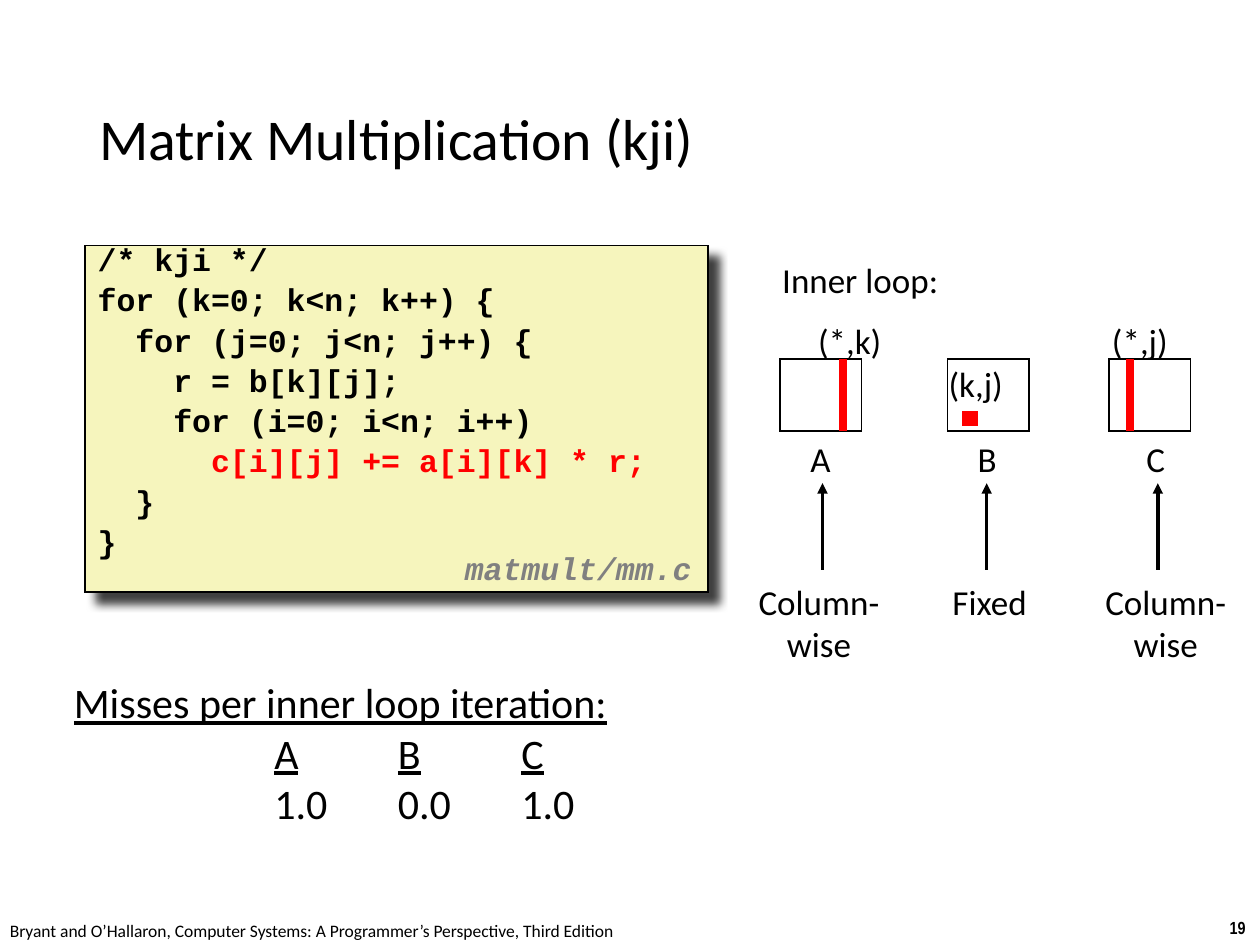
from dataclasses import dataclass

from lxml import etree
from pptx import Presentation
from pptx import util as u
from pptx.dml.color import RGBColor
from pptx.enum import shapes, text
from pptx.oxml.ns import qn


@dataclass(frozen=True)
class Theme:
    ink: str = "000000"
    paper: str = "FFFFFF"
    code_fill: str = "F6F5BD"
    accent: str = "FF0000"
    muted: str = "808080"
    body: str = "Calibri"
    mono: str = "Courier New"
    narrow: str = "Arial Narrow"
    title_size: int = 33
    misses_size: int = 24
    label_size: int = 20
    code_size: int = 18
    footer_size: int = 10


@dataclass(frozen=True)
class Matrix:
    name: str
    index: str
    access: str
    misses: str
    left: float
    name_dx: float
    index_dx: float
    index_dy: float
    mark_dx: float
    arrow_dx: float
    access_dx: float


THEME = Theme()
MATRICES = [
    Matrix("A", "(*,k)", "Column-\nwise", "1.0", 0, 0.82, 1.41, -0.92, 1.27, 0.86, 0.79),
    Matrix("B", "(k,j)", "Fixed", "0.0", 3.38, 0.8, 0.57, -0.05, 0.38, 0.79, 0.85),
    Matrix("C", "(*,j)", "Column-\nwise", "1.0", 6.63, 0.95, 0.63, -0.92, 0.43, 0.99, 1.15),
]
CODE = [
    "/* kji */",
    "for (k=0; k<n; k++) {",
    "  for (j=0; j<n; j++) {",
    "    r = b[k][j];",
    "    for (i=0; i<n; i++)",
    "      c[i][j] += a[i][k] * r;",
    "  }",
    "}",
]
HOT_LINE = 5


def color(value):
    return RGBColor.from_string(value)


def child(parent, tag, **attributes):
    return etree.SubElement(parent, qn(tag), attributes)


def write(frame, content, size=THEME.label_size, font=THEME.body, ink=THEME.ink,
          bold=False, italic=False, underline=False, align=text.PP_ALIGN.LEFT,
          spacing=None, before=None, anchor=text.MSO_ANCHOR.TOP, wrap=False):
    frame.word_wrap = wrap
    frame.vertical_anchor = anchor
    for number, line in enumerate(content.split("\n")):
        paragraph = frame.add_paragraph() if number else frame.paragraphs[0]
        paragraph.alignment = align
        paragraph.line_spacing = spacing
        paragraph.space_before = before
        for part in line.replace("\t", "\n\t\n").split("\n"):
            if not part:
                continue
            run = paragraph.add_run()
            run.text = part
            run.font.size = u.Pt(size)
            run.font.name = font
            run.font.bold = bold
            run.font.italic = italic
            run.font.underline = underline and part != "\t"
            run.font.color.rgb = color(ink)
    return frame.paragraphs


def add_text(slide, left, top, width, height, content, **style):
    box = slide.shapes.add_textbox(u.Cm(left), u.Cm(top), u.Cm(width), u.Cm(height))
    return write(box.text_frame, content, **style)


def add_box(slide, left, top, width, height, fill, line, weight):
    box = slide.shapes.add_shape(shapes.MSO_SHAPE.RECTANGLE, u.Cm(left), u.Cm(top),
                                 u.Cm(width), u.Cm(height))
    box.shadow.inherit = False
    box.fill.solid()
    box.fill.fore_color.rgb = color(fill)
    box.line.color.rgb = color(line)
    box.line.width = u.Pt(weight)
    child(box._element.spPr.find(qn("a:ln")), "a:miter", lim="800000")
    return box


def add_line(slide, x, bottom, top, ink, weight, arrow=False):
    line = slide.shapes.add_connector(shapes.MSO_CONNECTOR.STRAIGHT, u.Cm(x), u.Cm(bottom),
                                      u.Cm(x), u.Cm(top))
    line.line.color.rgb = color(ink)
    line.line.width = u.Pt(weight)
    properties = line._element.spPr
    if arrow:
        child(properties.find(qn("a:ln")), "a:tailEnd", type="triangle")
    child(properties, "a:effectLst")


def add_shadow(box):
    effects = box._element.spPr.find(qn("a:effectLst"))
    shadow = child(effects, "a:outerShdw", blurRad=str(u.Pt(5)), dist=str(u.Pt(8.5)),
                   dir="2700000", algn="tl", rotWithShape="0")
    child(child(shadow, "a:srgbClr", val=THEME.ink), "a:alpha", val="75000")


def code_panel(slide, left, top, width, height):
    panel = add_box(slide, left, top, width, height, THEME.code_fill, THEME.ink, 1)
    add_shadow(panel)
    lines = write(panel.text_frame, "\n".join(CODE), size=THEME.code_size, font=THEME.mono,
                  bold=True, spacing=0.65, before=u.Pt(9), wrap=True)
    lines[HOT_LINE].runs[0].font.color.rgb = color(THEME.accent)
    add_text(slide, left + width - 5.15, top + height - 0.94, 5.28, 0.99, "matmult/mm.c",
             size=THEME.code_size, font=THEME.mono, ink=THEME.muted, bold=True, italic=True,
             spacing=0.94)


def matrix_diagram(slide, left, top, matrix):
    width, height = 1.65, 1.45
    centered = text.PP_ALIGN.CENTER
    add_box(slide, left, top, width, height, THEME.paper, THEME.ink, 1)
    mark = left + matrix.mark_dx
    if matrix.access == "Fixed":
        add_box(slide, mark, top + 1.12, 0.15, 0.15, THEME.ink, THEME.accent, 4.5)
    else:
        add_line(slide, mark, top + height, top, THEME.accent, 4.5)
    add_text(slide, left + matrix.index_dx - 1.1, top + matrix.index_dy, 2.2, 1.1,
             matrix.index, align=centered)
    add_text(slide, left + matrix.name_dx - 0.5, top + height, 1, 1.1, matrix.name,
             align=centered)
    add_line(slide, left + matrix.arrow_dx, top + 4.25, top + 2.5, THEME.ink, 2, arrow=True)
    add_text(slide, left + matrix.access_dx - 1.5, top + 4.34, 3, 1.96, matrix.access,
             align=centered)


def inner_loop(slide, left, top):
    add_text(slide, left - 0.2, top, 3.68, 1.1, "Inner loop:")
    for matrix in MATRICES:
        matrix_diagram(slide, left + matrix.left, top + 2.16, matrix)


def misses(slide, left, top, width, height):
    names = "".join("\t" + matrix.name for matrix in MATRICES)
    counts = "".join("\t" + matrix.misses for matrix in MATRICES)
    heading, *rows = add_text(
        slide, left, top, width, height,
        "\n".join(["Misses per inner loop iteration:", names, counts]),
        size=THEME.misses_size, underline=True, wrap=True)
    for row in rows:
        tabs = child(row._p.get_or_add_pPr(), "a:tabLst")
        for column in range(len(MATRICES)):
            child(tabs, "a:tab", pos=str(u.Cm(4.04 + 2.49 * column)), algn="l")
    for run in rows[-1].runs:
        run.font.underline = False


def footer(slide, top):
    add_text(slide, -0.05, top, 12.9, 0.69,
             "Bryant and O’Hallaron, Computer Systems: A Programmer’s Perspective, Third Edition",
             size=THEME.footer_size)
    add_text(slide, 24.54, top - 0.06, 0.86, 0.69, "19", size=THEME.footer_size,
             font=THEME.narrow, bold=True)


def main():
    deck = Presentation()
    deck.slide_width, deck.slide_height = u.Cm(25.4), u.Cm(19.05)
    slide = deck.slides.add_slide(deck.slide_layouts[6])
    add_text(slide, 1.75, 1.02, 21.9, 3.68, "Matrix Multiplication (kji)", size=THEME.title_size,
             spacing=0.9, anchor=text.MSO_ANCHOR.MIDDLE, wrap=True)
    code_panel(slide, 1.72, 4.95, 12.55, 6.99)
    inner_loop(slide, 15.72, 5.08)
    misses(slide, 1.24, 13.52, 13.79, 3.4)
    footer(slide, 18.42)
    deck.save("out.pptx")


if __name__ == "__main__":
    main()
